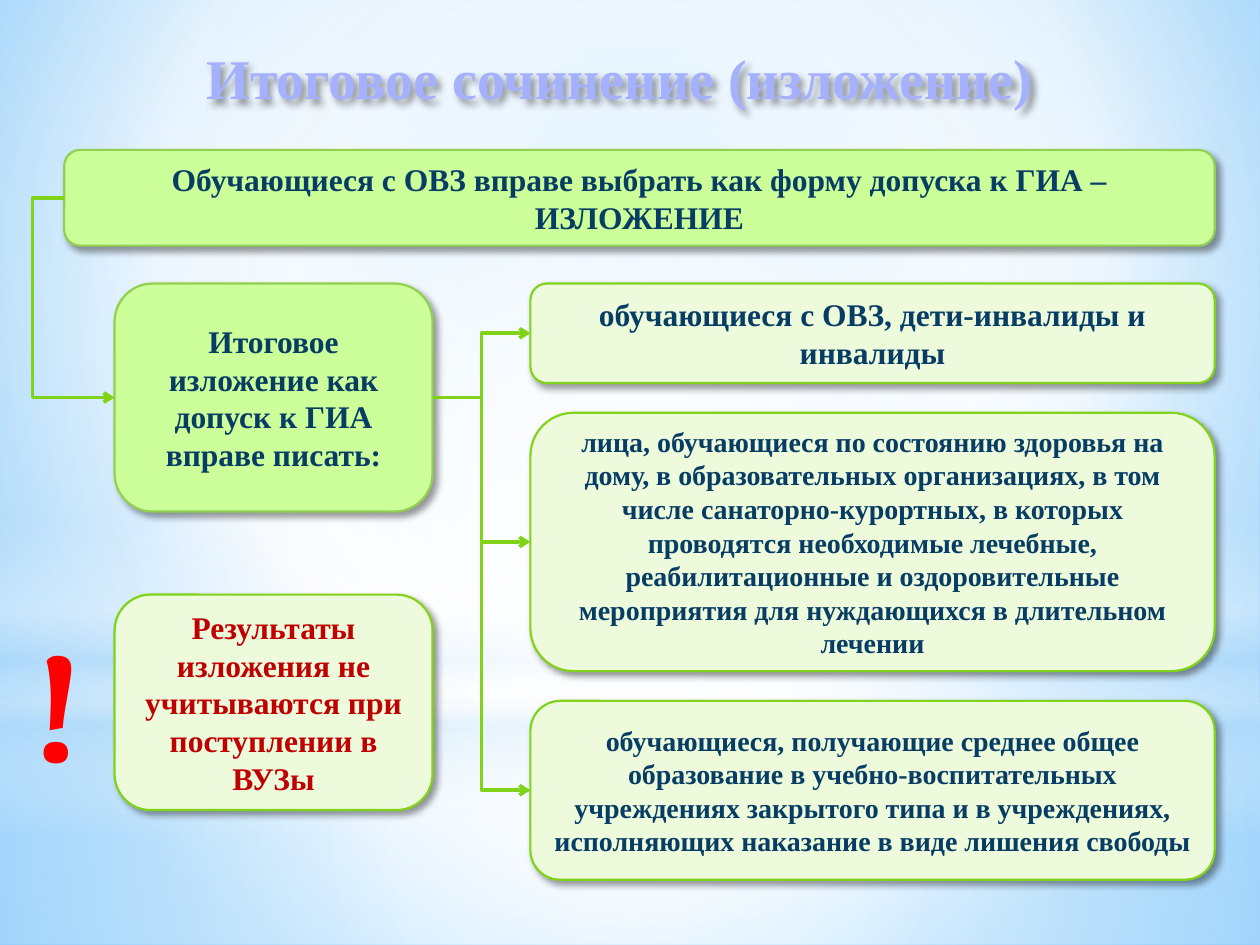
"""Build a slide showing who may write the final exposition."""
from lxml import etree
from pptx import Presentation
from pptx.dml.color import RGBColor
from pptx.enum.shapes import MSO_CONNECTOR, MSO_SHAPE
from pptx.enum.text import MSO_ANCHOR, MSO_AUTO_SIZE, PP_ALIGN
from pptx.oxml.ns import qn
from pptx.util import Pt

RECTANGLE, OVAL, ROUNDED = MSO_SHAPE.RECTANGLE, MSO_SHAPE.OVAL, MSO_SHAPE.ROUNDED_RECTANGLE
ELBOW = MSO_CONNECTOR.ELBOW
CENTER, MIDDLE = PP_ALIGN.CENTER, MSO_ANCHOR.MIDDLE
FIT_SHAPE = MSO_AUTO_SIZE.SHAPE_TO_FIT_TEXT
LEFT_SIDE, RIGHT_SIDE = 1, 3

LILAC = RGBColor(0xA5, 0xB0, 0xFF)
LIME = RGBColor(0xCC, 0xFF, 0x99)
PALE = RGBColor(0xED, 0xFB, 0xDC)
LEAF = RGBColor(0x92, 0xD0, 0x50)
GREEN = RGBColor(0x81, 0xD3, 0x1A)
NAVY = RGBColor(0x07, 0x3C, 0x65)
CRIMSON = RGBColor(0xC0, 0x00, 0x00)
RED = RGBColor(0xFF, 0x00, 0x00)
WHITE = RGBColor(0xFF, 0xFF, 0xFF)
MIST = RGBColor(0xB4, 0xDC, 0xFA)
SKY = RGBColor(0x9E, 0xD5, 0xFF)
BLUE = RGBColor(0x5B, 0xB9, 0xFF)
BLACK = RGBColor(0, 0, 0)

SERIF = "Times New Roman"
CENTERED = (50, 50, 50, 50)
BACKDROP = [(0, SKY, 100), (60, WHITE, 100), (100, BLUE, 100)]
LAYERS = [
    (RECTANGLE, 401.8, 138.2, [(0, WHITE, 91), (37, WHITE, 76), (100, MIST, 79)], CENTERED),
    (RECTANGLE, 0, 401.8, [(0, WHITE, 89), (48, WHITE, 62), (100, MIST, 79)], CENTERED),
    (RECTANGLE, 296.6, 180, [(0, WHITE, 0), (29, WHITE, 30), (45, MIST, 40),
                             (55, WHITE, 26), (65, MIST, 60), (100, WHITE, 0)], None),
    (OVAL, 126, 401.8, [(0, WHITE, 100), (56, WHITE, 0)], CENTERED),
]

TITLE = "Итоговое сочинение (изложение)"
HEADER = ["Обучающиеся с ОВЗ вправе выбрать как форму допуска к ГИА –", "ИЗЛОЖЕНИЕ"]
QUESTION = ["Итоговое изложение как допуск к ГИА вправе писать:"]
WARNING = ["Результаты изложения не учитываются при поступлении в ВУЗы"]
CATEGORIES = [
    (56.9, 18, "обучающиеся с ОВЗ, дети-инвалиды и инвалиды"),
    (147.6, 16, "лица, обучающиеся по состоянию здоровья на дому, в образовательных "
                "организациях, в том числе санаторно-курортных, в которых проводятся "
                "необходимые лечебные, реабилитационные и оздоровительные мероприятия "
                "для нуждающихся в длительном лечении"),
    (102.2, 16, "обучающиеся, получающие среднее общее образование в "
                "учебно-воспитательных учреждениях закрытого типа и в учреждениях, "
                "исполняющих наказание в виде лишения свободы"),
]
COLUMN_LEFT, COLUMN_WIDTH = 65.5, 181.7
CATEGORY_LEFT, CATEGORY_WIDTH = 303.1, 391
ROW_TOP, ROW_GAP = 162, 17


def add_color(parent, color, opacity):
    element = etree.SubElement(parent, qn("a:srgbClr"), val=str(color))
    if opacity < 100:
        etree.SubElement(element, qn("a:alpha"), val=str(opacity * 1000))


def set_gradient(fill_parent, stops, focus):
    gradient = etree.Element(qn("a:gradFill"), rotWithShape="1")
    stop_list = etree.SubElement(gradient, qn("a:gsLst"))
    for position, color, opacity in stops:
        stop = etree.SubElement(stop_list, qn("a:gs"), pos=str(position * 1000))
        add_color(stop, color, opacity)
    if focus:
        circle = etree.SubElement(gradient, qn("a:path"), path="circle")
        sides = {side: str(value * 1000) for side, value in zip("ltrb", focus)}
        etree.SubElement(circle, qn("a:fillToRect"), sides)
    else:
        etree.SubElement(gradient, qn("a:lin"), ang="5400000", scaled="0")
    solid = fill_parent.find(qn("a:solidFill"))
    fill_parent.replace(solid, gradient)


def add_shadow(shape):
    shape.shadow.inherit = False
    effects = shape._element.spPr.find(qn("a:effectLst"))
    shadow = etree.SubElement(effects, qn("a:outerShdw"), blurRad=str(Pt(4)),
                              dist=str(Pt(3)), dir="2700000", algn="tl", rotWithShape="0")
    add_color(shadow, BLACK, 40)


def style_font(paragraph, name, size, color):
    font = paragraph.font
    font.name, font.size, font.bold = name, Pt(size), True
    font.color.rgb = color


def add_layer(slide, kind, top, height, stops, focus):
    shape = slide.shapes.add_shape(kind, 0, Pt(top), Pt(720), Pt(height))
    shape.shadow.inherit = False
    shape.line.fill.background()
    shape.fill.solid()
    set_gradient(shape._element.spPr, stops, focus)


def add_label(slide, box, text, font_name, size, color):
    label = slide.shapes.add_textbox(*map(Pt, box))
    frame = label.text_frame
    frame.word_wrap, frame.auto_size = True, FIT_SHAPE
    frame.text = text
    style_font(frame.paragraphs[0], font_name, size, color)
    return label


def add_box(slide, box, lines, fill=PALE, border=GREEN, color=NAVY, size=18):
    shape = slide.shapes.add_shape(ROUNDED, *map(Pt, box))
    shape.fill.solid()
    shape.fill.fore_color.rgb = fill
    shape.line.color.rgb, shape.line.width = border, Pt(1.25)
    add_shadow(shape)
    frame = shape.text_frame
    frame.word_wrap, frame.vertical_anchor = True, MIDDLE
    frame.text = "\n".join(lines)
    for paragraph in frame.paragraphs:
        paragraph.alignment = CENTER
        style_font(paragraph, SERIF, size, color)
    return shape


def add_elbow(slide, source, source_side, target, bend=0.5):
    connector = slide.shapes.add_connector(ELBOW, 0, 0, 0, 0)
    connector.begin_connect(source, source_side)
    connector.end_connect(target, LEFT_SIDE)
    connector.line.color.rgb, connector.line.width = GREEN, Pt(2)
    properties = connector._element.spPr
    guides = properties.find(qn("a:prstGeom")).get_or_add_avLst()
    etree.SubElement(guides, qn("a:gd"), name="adj1", fmla=f"val {round(bend * 100000)}")
    etree.SubElement(properties.find(qn("a:ln")), qn("a:tailEnd"), type="arrow")
    etree.SubElement(properties, qn("a:effectLst"))


def main():
    presentation = Presentation()
    presentation.slide_width, presentation.slide_height = Pt(720), Pt(540)
    slide = presentation.slides.add_slide(presentation.slide_layouts[6])
    slide.background.fill.solid()
    set_gradient(slide._element.cSld.bg.bgPr, BACKDROP, (20, 10, 20, 60))
    for layer in LAYERS:
        add_layer(slide, *layer)

    add_shadow(add_label(slide, (110.9, 21.6, 622.8, 46.1), TITLE, SERIF, 32, LILAC))
    header = add_box(slide, (36.7, 85.7, 657.4, 54.7), HEADER, LIME, LEAF)
    question = add_box(slide, (COLUMN_LEFT, ROW_TOP, COLUMN_WIDTH, 130.3),
                       QUESTION, LIME, LEAF)
    add_elbow(slide, header, LEFT_SIDE, question, -0.63)

    top = ROW_TOP
    for height, size, text in CATEGORIES:
        category = add_box(slide, (CATEGORY_LEFT, top, CATEGORY_WIDTH, height),
                           [text], size=size)
        add_elbow(slide, question, RIGHT_SIDE, category)
        top += height + ROW_GAP

    add_box(slide, (COLUMN_LEFT, 339.8, COLUMN_WIDTH, 123.1), WARNING, color=CRIMSON)
    add_label(slide, (11.5, 344.2, 51.1, 113.8), "!", "Cambria", 88, RED)
    presentation.save("out.pptx")


if __name__ == "__main__":
    main()
